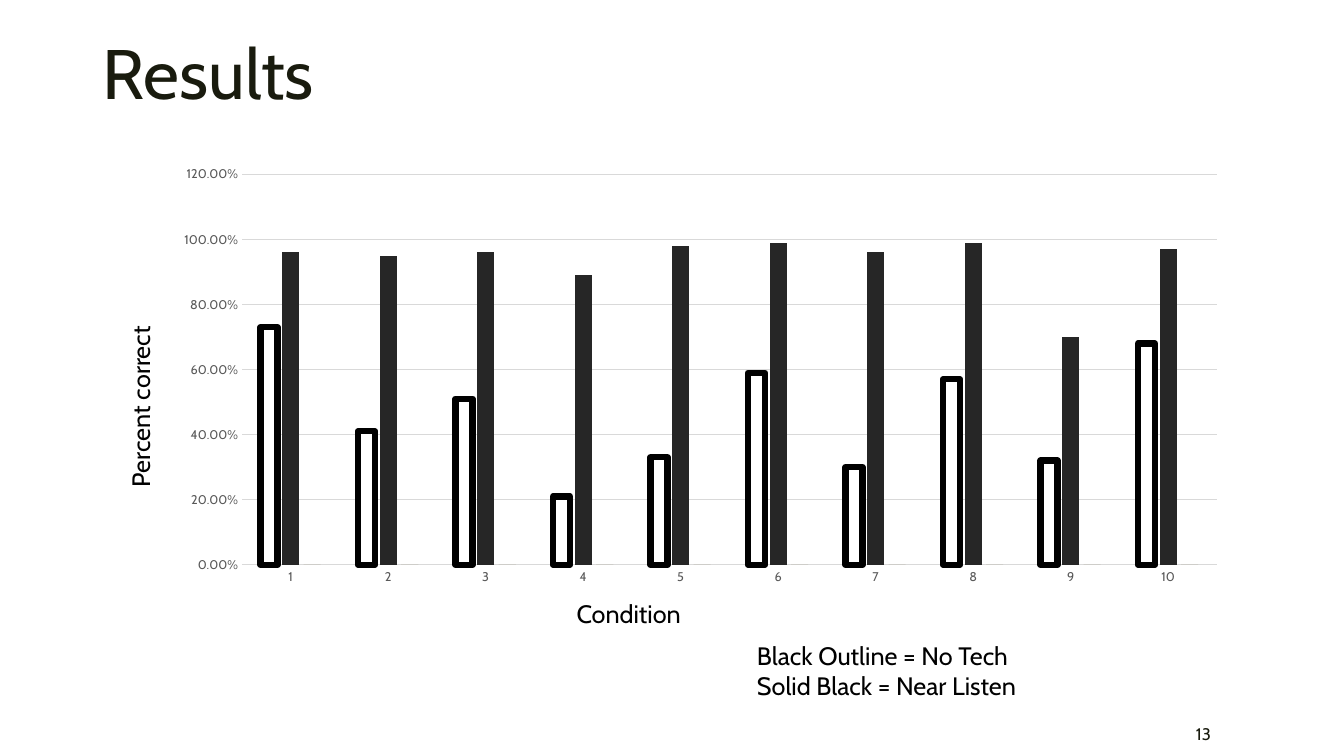
"""Build the results slide with its clustered column chart."""
from lxml.etree import SubElement
from pptx import Presentation
from pptx.chart.data import CategoryChartData
from pptx.dml.color import RGBColor
from pptx.enum.chart import XL_CHART_TYPE, XL_TICK_MARK
from pptx.enum.text import MSO_ANCHOR, PP_ALIGN
from pptx.oxml import parse_xml
from pptx.oxml.ns import nsdecls, qn
from pptx.util import Inches, Pt

FONT = "Cabin"
COLORS = {
    "background": "FFFFFF",
    "title": "191B0E",
    "label": "000000",
    "tick_label": "595959",
    "grid": "D9D9D9",
    "no_tech": "FFFFFF",
    "listening": "262626",
    "unused": "897B61",
}
SCORES = {
    "Series 1": (0.73, 0.41, 0.51, 0.21, 0.33, 0.59, 0.3, 0.57, 0.32, 0.68),
    "Series 2": (0.96, 0.95, 0.96, 0.89, 0.98, 0.99, 0.96, 0.99, 0.7, 0.97),
    "Series 3": (0,) * 10,
}
PLOT_FRAME = {"x": 0.058, "y": 0.015, "w": 0.921, "h": 0.835}


def rgb(name):
    """Return a named colour."""
    return RGBColor.from_string(COLORS[name])


def style_font(font, size, color):
    """Set typeface, size and colour of a font."""
    font.name, font.size = FONT, Pt(size)
    font.color.rgb = rgb(color)


def style_line(line, color, width):
    """Set colour and width of a line."""
    line.color.rgb = rgb(color)
    line.width = Pt(width)


def add_label(slide, lines, box, size=18, color="label", align=PP_ALIGN.LEFT,
              anchor=MSO_ANCHOR.TOP, spacing=None, rotation=0):
    """Add a text box with one paragraph per line."""
    label = slide.shapes.add_textbox(*map(Inches, box))
    label.rotation = rotation
    frame = label.text_frame
    frame.word_wrap = True
    frame.vertical_anchor = anchor
    frame.text = "\n".join(lines)
    for paragraph in frame.paragraphs:
        paragraph.alignment = align
        paragraph.line_spacing = spacing
        style_font(paragraph.font, size, color)


def style_axis(axis):
    """Apply the shared axis look."""
    axis.major_tick_mark = axis.minor_tick_mark = XL_TICK_MARK.NONE
    style_font(axis.tick_labels.font, 9, "tick_label")


def place_plot(chart):
    """Fix the inner plot area within the chart."""
    plot_area = chart.element.find(".//" + qn("c:plotArea"))
    for old_layout in plot_area.findall(qn("c:layout")):
        plot_area.remove(old_layout)
    layout = parse_xml(f"<c:layout {nsdecls('c')}><c:manualLayout/></c:layout>")
    settings = {"layoutTarget": "inner", "xMode": "edge", "yMode": "edge", **PLOT_FRAME}
    for tag, value in settings.items():
        SubElement(layout[0], qn(f"c:{tag}")).set("val", str(value))
    plot_area.insert(0, layout)


def add_score_chart(slide, box):
    """Add the chart of percent correct per condition."""
    data = CategoryChartData(number_format="0.00%")
    data.categories = [str(condition) for condition in range(1, 11)]
    for name, scores in SCORES.items():
        data.add_series(name, scores)
    chart = slide.shapes.add_chart(
        XL_CHART_TYPE.COLUMN_CLUSTERED, *map(Inches, box), data).chart
    chart.has_title = chart.has_legend = False
    style_font(chart.font, 10, "label")

    conditions, percents = chart.category_axis, chart.value_axis
    style_axis(conditions)
    style_axis(percents)
    style_line(conditions.format.line, "grid", 0.75)
    percents.format.line.fill.background()
    percents.minimum_scale, percents.maximum_scale = 0, 1.2
    percents.major_unit = 0.2
    style_line(percents.major_gridlines.format.line, "grid", 0.75)
    percents.tick_labels.number_format = "0.00%"
    percents.tick_labels.number_format_is_linked = False

    columns = chart.plots[0]
    columns.vary_by_categories = False
    columns.gap_width, columns.overlap = 219, -27
    for series, color in zip(columns.series, ("no_tech", "listening", "unused")):
        series.invert_if_negative = False
        series.format.fill.solid()
        series.format.fill.fore_color.rgb = rgb(color)
        if color == "no_tech":
            style_line(series.format.line, "label", 4.5)
        else:
            series.format.line.fill.background()
    place_plot(chart)


def main():
    """Build and save the slide."""
    deck = Presentation()
    deck.slide_width, deck.slide_height = Inches(13.33), Inches(7.5)
    slide = deck.slides.add_slide(deck.slide_layouts[6])
    slide.background.fill.solid()
    slide.background.fill.fore_color.rgb = rgb("background")

    add_label(slide, ["Results"], (0.92, 0.34, 10.5, 1.62), 50, "title", spacing=0.89)
    add_label(slide, ["13"], (10.36, 7.06, 1.75, 0.44), 12, "title",
              PP_ALIGN.RIGHT, MSO_ANCHOR.MIDDLE)
    add_score_chart(slide, (1.79, 1.65, 10.5, 4.65))
    add_label(slide, ["Black Outline = No Tech", "Solid Black = Near Listen"],
              (7.41, 6.3, 4.03, 0.71))
    add_label(slide, ["Condition"], (5.62, 5.89, 4.53, 0.4))
    add_label(slide, ["Percent correct"], (-0.25, 3.09, 3.28, 0.4), rotation=270)
    deck.save("out.pptx")


if __name__ == "__main__":
    main()
